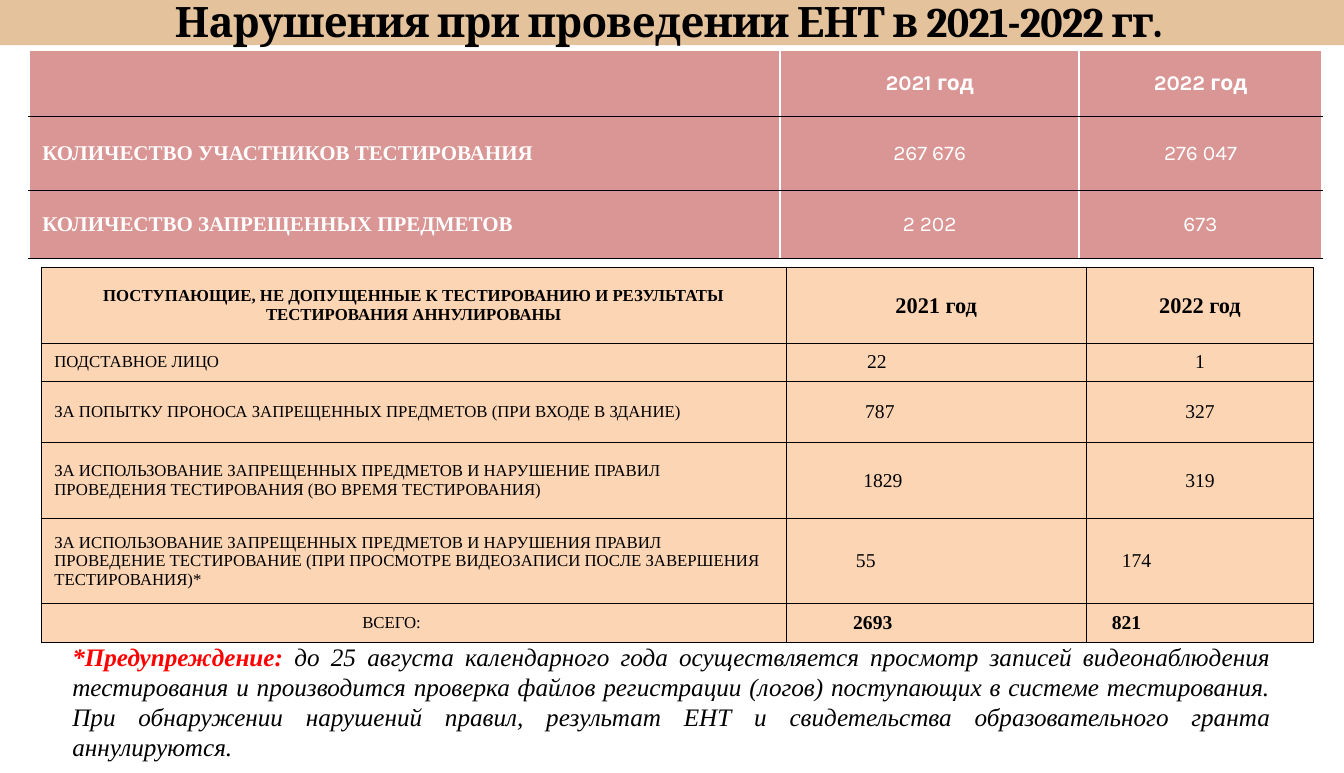
from lxml.etree import SubElement
from pptx import Presentation
from pptx.dml.color import RGBColor
from pptx.enum.shapes import MSO_SHAPE as Shape
from pptx.enum.text import MSO_ANCHOR as Anchor, PP_ALIGN as Align
from pptx.oxml.ns import qn
from pptx.util import Pt

PX = 9144  # 100 px to the inch
SLIDE_SIZE = (1335, 768)
SERIF, SANS = "Times New Roman", "Karla"
BLACK, WHITE = "000000", "FFFFFF"

# Content
TITLE = "Нарушения при проведении ЕНТ в 2021-2022 гг."
WARNING = [
    ("*Предупреждение: ", dict(color="FF0000", bold=True)),
    ("до 25 августа календарного года осуществляется просмотр записей видеонаблюдения "
     "тестирования и производится проверка файлов регистрации (логов) поступающих в системе "
     "тестирования. При обнаружении нарушений правил, результат ЕНТ и свидетельства "
     "образовательного гранта аннулируются.", dict(color=BLACK, bold=False)),
]

# Cell formats
COUNT_HEAD = dict(name=SANS, size=Pt(15), color=WHITE, bold=True)
COUNT_LABEL = dict(COUNT_HEAD, name=SERIF)
COUNT_VALUE = dict(COUNT_HEAD, bold=False)
REASON = dict(name=SERIF, size=Pt(12), color=BLACK, bold=False)
REASON_HEAD = dict(REASON, bold=True)
YEAR_HEAD = dict(REASON_HEAD, size=Pt(16))
REASON_VALUE = dict(REASON, size=Pt(14))
TOTAL_VALUE = dict(REASON_VALUE, bold=True)

# Row: height, label format, value format, cells. A cell is a text, or a text with
# the distance by which its centre lies left of the column's centre.
COUNTS = dict(
    at=(29, 50), columns=(746, 297, 241), fill="D99694",
    sides=(WHITE, 1.5), top=(WHITE, 1.5), rules=(BLACK, 1),
    rows=[
        (66, COUNT_LABEL, COUNT_HEAD, ("", "2021 год", "2022 год")),
        (73, COUNT_LABEL, COUNT_VALUE,
         ("КОЛИЧЕСТВО УЧАСТНИКОВ ТЕСТИРОВАНИЯ", "267 676", "276 047")),
        (68, COUNT_LABEL, COUNT_VALUE,
         ("КОЛИЧЕСТВО ЗАПРЕЩЕННЫХ ПРЕДМЕТОВ", "2 202", "673")),
    ])
REASONS = dict(
    at=(41, 266), columns=(740, 298, 226), fill="FCD5B5",
    sides=(BLACK, 1), top=(BLACK, 1), rules=(BLACK, 1),
    rows=[
        (75, REASON_HEAD, YEAR_HEAD,
         (("ПОСТУПАЮЩИЕ, НЕ ДОПУЩЕННЫЕ К ТЕСТИРОВАНИЮ И РЕЗУЛЬТАТЫ\n"
           "ТЕСТИРОВАНИЯ АННУЛИРОВАНЫ", 0), "2021 год", "2022 год")),
        (38, REASON, REASON_VALUE, ("ПОДСТАВНОЕ ЛИЦО", ("22", 59), "1")),
        (61, REASON, REASON_VALUE,
         ("ЗА ПОПЫТКУ ПРОНОСА ЗАПРЕЩЕННЫХ ПРЕДМЕТОВ (ПРИ ВХОДЕ В ЗДАНИЕ)",
          ("787", 56), "327")),
        (75, REASON, REASON_VALUE,
         ("ЗА ИСПОЛЬЗОВАНИЕ ЗАПРЕЩЕННЫХ ПРЕДМЕТОВ И НАРУШЕНИЕ ПРАВИЛ ПРОВЕДЕНИЯ "
          "ТЕСТИРОВАНИЯ (ВО ВРЕМЯ ТЕСТИРОВАНИЯ)", ("1829", 53), "319")),
        (85, REASON, REASON_VALUE,
         ("ЗА ИСПОЛЬЗОВАНИЕ ЗАПРЕЩЕННЫХ ПРЕДМЕТОВ И НАРУШЕНИЯ ПРАВИЛ ПРОВЕДЕНИЕ "
          "ТЕСТИРОВАНИЕ (ПРИ ПРОСМОТРЕ ВИДЕОЗАПИСИ ПОСЛЕ ЗАВЕРШЕНИЯ ТЕСТИРОВАНИЯ)*",
          ("55", 70), ("174", 63))),
        (38, REASON, TOTAL_VALUE, (("ВСЕГО:", 22), ("2693", 63), ("821", 73))),
    ])


def rgb(color):
    return RGBColor.from_string(color)


def px(*lengths):
    return [length * PX for length in lengths]


def set_all(target, values):
    for key, value in values.items():
        setattr(target, key, value)


def add_run(paragraph, text, color, **font):
    run = paragraph.add_run()
    run.text = text
    run.font.color.rgb = rgb(color)
    set_all(run.font, font)
    return run


def add_text_frame(box, margin_x, margin_y, anchor):
    frame = slide.shapes.add_textbox(*px(*box)).text_frame
    x, y = px(margin_x, margin_y)
    set_all(frame, dict(word_wrap=True, vertical_anchor=anchor, margin_left=x,
                        margin_right=x, margin_top=y, margin_bottom=y))
    return frame


def add_border(cell, edge, color, width):
    line = SubElement(cell._tc.get_or_add_tcPr(), qn(f"a:ln{edge}"), w=str(Pt(width)))
    fill = SubElement(line, qn("a:solidFill"))
    SubElement(fill, qn("a:srgbClr"), val=color)


def fill_cell(cell, content, font, centred):
    text, shift = content if isinstance(content, tuple) else (content, 0)
    left, right, y = px(13, 13 + 2 * shift, 7)
    set_all(cell, dict(vertical_anchor=Anchor.MIDDLE, margin_left=left,
                       margin_right=right, margin_top=y, margin_bottom=y))
    for index, line in enumerate(text.split("\n") if text else []):
        frame = cell.text_frame
        paragraph = frame.add_paragraph() if index else frame.paragraphs[0]
        paragraph.alignment = Align.CENTER if centred else Align.LEFT
        add_run(paragraph, line, **font)


def add_data_table(data):
    rows, columns = data["rows"], data["columns"]
    size = sum(columns), sum(row[0] for row in rows)
    table = slide.shapes.add_table(len(rows), len(columns), *px(*data["at"], *size)).table
    set_all(table, dict(first_row=False, horz_banding=False))
    for column, width in zip(table.columns, columns):
        column.width = width * PX
    for r, (height, label_font, value_font, contents) in enumerate(rows):
        table.rows[r].height = height * PX
        for c, content in enumerate(contents):
            cell = table.cell(r, c)
            fill_cell(cell, content, value_font if c else label_font,
                      c > 0 or isinstance(content, tuple))
            edges = dict(L=data["sides"], R=data["sides"],
                         T=data["rules" if r else "top"], B=data["rules"])
            for edge, line in edges.items():
                add_border(cell, edge, *line)
            cell.fill.solid()
            cell.fill.fore_color.rgb = rgb(data["fill"])


deck = Presentation()
deck.slide_width, deck.slide_height = px(*SLIDE_SIZE)
slide = deck.slides.add_slide(deck.slide_layouts[6])

# Title band
band = slide.shapes.add_shape(Shape.RECTANGLE, *px(0, -2, 1337, 47))
band.shadow.inherit = False
band.fill.solid()
band.fill.fore_color.rgb = rgb("E4C29C")
band.line.fill.background()

add_data_table(COUNTS)

# Title
title = add_text_frame((41, -18, 1247, 61), 12, 6, Anchor.MIDDLE).paragraphs[0]
set_all(title, dict(alignment=Align.CENTER, line_spacing=Pt(47.6)))
heading = add_run(title, TITLE, BLACK, name="Cambria", size=Pt(30), bold=True)
heading.font._element.set("spc", "-50")

add_data_table(REASONS)

# Warning
warning = add_text_frame((62, 632, 1210, 131), 10, 5, Anchor.TOP).paragraphs[0]
warning.alignment = Align.JUSTIFY
for text, font in WARNING:
    add_run(warning, text, name=SERIF, size=Pt(18), italic=True, **font)

deck.save("out.pptx")
